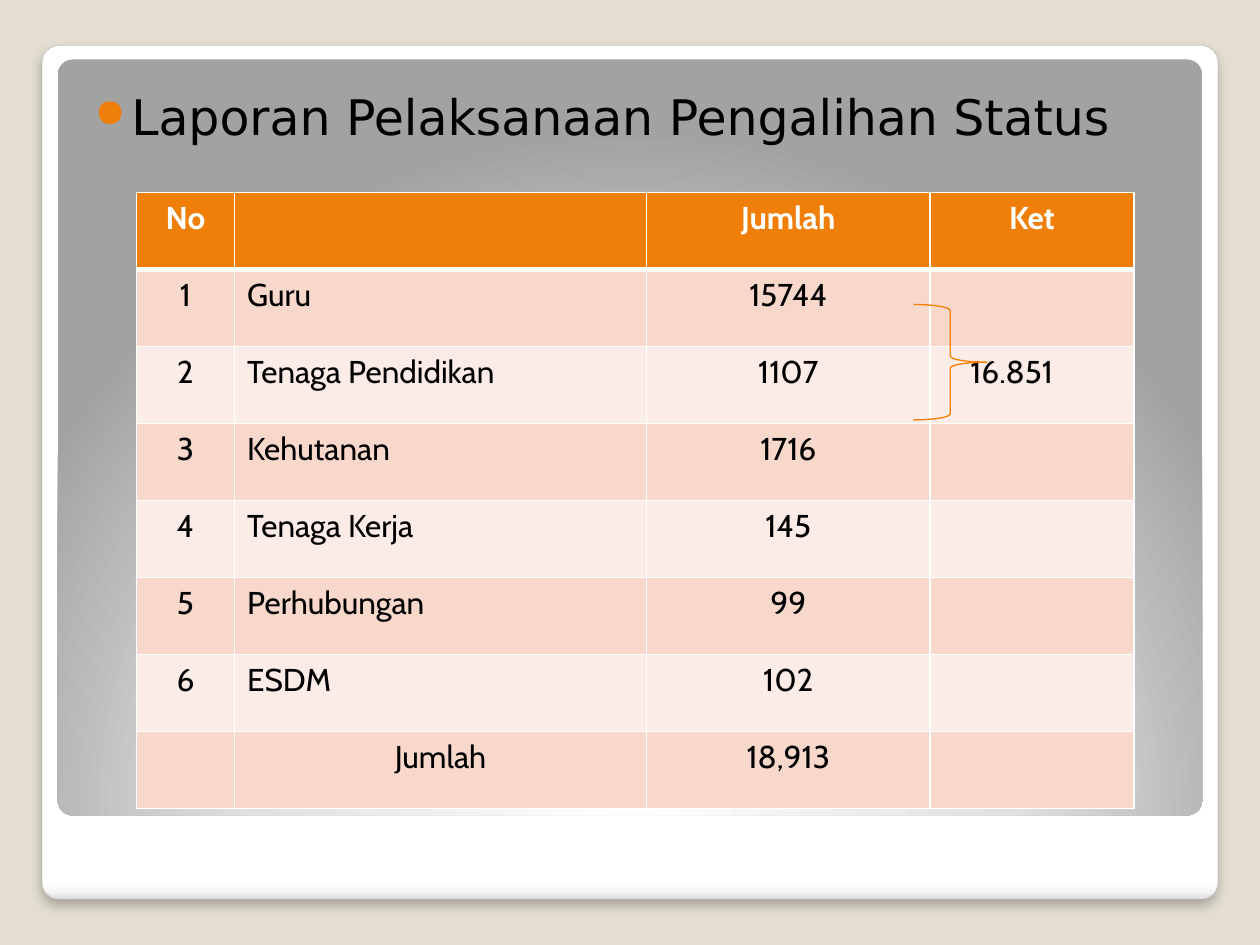
from dataclasses import dataclass

from lxml import etree
from pptx import Presentation
from pptx.dml.color import RGBColor
from pptx.enum.shapes import MSO_SHAPE
from pptx.enum.text import MSO_ANCHOR, MSO_AUTO_SIZE, PP_ALIGN
from pptx.oxml.ns import qn
from pptx.util import Pt

ROUNDED = MSO_SHAPE.ROUNDED_RECTANGLE
BRACE = MSO_SHAPE.RIGHT_BRACE
TOP = MSO_ANCHOR.TOP
NO_AUTOFIT = MSO_AUTO_SIZE.NONE
LEFT, CENTER = PP_ALIGN.LEFT, PP_ALIGN.CENTER
TITLE_ONLY = 5


@dataclass(frozen=True)
class Theme:
    background: str = "E3DED1"
    accent: str = "F07F09"
    brace: str = "F97F00"
    frame_line: str = "A4A4A4"
    text: str = "000000"
    white: str = "FFFFFF"
    bands: tuple = ("F9D8CC", "FCECE7")
    frame_stops: tuple = ((0, "FFFFFF"), (98, "FFFFFF"), (99, "F7F7F7"), (100, "DADADA"))
    panel_stops: tuple = ((0, "FFFFFF"), (55, "E1E1E1"), (100, "A2A2A2"))
    title_font: str = "DejaVu Sans"
    table_font: str = "Cabin"
    title_size: int = 28
    table_size: int = 18


THEME = Theme()

ROWS = (
    ("No", "", "Jumlah", "Ket"),
    ("1", "Guru", "15744", ""),
    ("2", "Tenaga Pendidikan", "1107", "16.851"),
    ("3", "Kehutanan", "1716", ""),
    ("4", "Tenaga Kerja", "145", ""),
    ("5", "Perhubungan", "99", ""),
    ("6", "ESDM", "102", ""),
    ("", "Jumlah", "18,913", ""),
)
COLUMN_WIDTHS = (56, 235.5, 162, 116.5)
ROW_HEIGHT = 44
NAME_COLUMN, NOTE_COLUMN = 1, 3
NOTE_INSET = 23


def rgb(color):
    return RGBColor.from_string(color)


def add_xml(parent, tag, **attributes):
    values = {name: str(value) for name, value in attributes.items()}
    return etree.SubElement(parent, qn(tag), values)


def style_font(paragraph, name, size, color, bold=False):
    font = paragraph.font
    font.name, font.size, font.bold = name, Pt(size), bold
    font.color.rgb = rgb(color)


def fill_gradient(shape, stops):
    """Give the shape a gradient with the stops and return its element."""
    shape.fill.gradient()
    gradient = shape.element.spPr.find(qn("a:gradFill"))
    for child in list(gradient):
        gradient.remove(child)
    stop_list = add_xml(gradient, "a:gsLst")
    for percent, color in stops:
        stop = add_xml(stop_list, "a:gs", pos=percent * 1000)
        add_xml(stop, "a:srgbClr", val=color)
    return gradient


def add_card(slide, left, top, width, height):
    card = slide.shapes.add_shape(ROUNDED, Pt(left), Pt(top), Pt(width), Pt(height))
    card.adjustments[0] = 0.02
    card.shadow.inherit = False
    return card


def add_frame(slide):
    frame = add_card(slide, 24, 26, 672, 488)
    gradient = fill_gradient(frame, THEME.frame_stops)
    add_xml(gradient, "a:lin", ang=90 * 60000, scaled=0)
    frame.line.color.rgb = rgb(THEME.frame_line)
    frame.line.width = Pt(0.16)
    effects = frame.element.spPr.find(qn("a:effectLst"))
    shadow = add_xml(effects, "a:outerShdw", blurRad=Pt(6), dist=Pt(4),
                     dir=90 * 60000, algn="tl", rotWithShape=0)
    shade = add_xml(shadow, "a:srgbClr", val=THEME.text)
    add_xml(shade, "a:alpha", val=25000)


def add_panel(slide):
    panel = add_card(slide, 33, 34, 654, 432)
    gradient = fill_gradient(panel, THEME.panel_stops)
    circle = add_xml(gradient, "a:path", path="circle")
    add_xml(circle, "a:fillToRect", l=50000, t=175000, r=50000, b=-75000)
    panel.line.fill.background()


def place_title(slide, text):
    title = slide.shapes.title
    slide.shapes.element.append(title.element)  # in front of the cards
    title.left, title.top, title.width, title.height = Pt(39.6), Pt(42), Pt(644), Pt(54)
    frame = title.text_frame
    frame.margin_left, frame.margin_top = Pt(14.4), Pt(7.2)
    frame.margin_right, frame.margin_bottom = Pt(7.2), Pt(3.6)
    frame.word_wrap = True
    frame.auto_size = NO_AUTOFIT
    frame.vertical_anchor = TOP
    frame.text = text
    paragraph = frame.paragraphs[0]
    paragraph.alignment = LEFT
    paragraph.space_before = Pt(2.5)
    style_font(paragraph, THEME.title_font, THEME.title_size, THEME.text)
    # Hanging bullet
    properties = paragraph._p.get_or_add_pPr()
    properties.set("marL", str(Pt(21)))
    properties.set("indent", str(Pt(-21)))
    bullet_color = etree.Element(qn("a:buClr"))
    add_xml(bullet_color, "a:srgbClr", val=THEME.accent)
    bullet_size = etree.Element(qn("a:buSzPct"), val="80000")
    bullet = etree.Element(qn("a:buChar"), char="●")
    defaults = properties.find(qn("a:defRPr"))
    for part in (bullet_color, bullet_size, bullet):
        defaults.addprevious(part)


def draw_borders(cell, top, bottom):
    properties = cell._tc.get_or_add_tcPr()
    for side, width in (("L", 1), ("R", 1), ("T", top), ("B", bottom)):
        line = add_xml(properties, f"a:ln{side}", w=Pt(width))
        solid = add_xml(line, "a:solidFill")
        add_xml(solid, "a:srgbClr", val=THEME.white)


def format_cell(cell, text, row, column):
    is_header, is_total = row == 0, row == len(ROWS) - 1
    draw_borders(cell, top=3 if row == 1 else 1, bottom=3 if is_header else 1)
    cell.fill.solid()
    cell.fill.fore_color.rgb = rgb(THEME.accent if is_header else THEME.bands[(row - 1) % 2])
    cell.text = text
    paragraph = cell.text_frame.paragraphs[0]
    style_font(paragraph, THEME.table_font, THEME.table_size,
               THEME.white if is_header else THEME.text, is_header)
    is_left = column in (NAME_COLUMN, NOTE_COLUMN) and not (is_header or is_total)
    paragraph.alignment = LEFT if is_left else CENTER
    if is_left and column == NOTE_COLUMN:
        cell.margin_left = Pt(NOTE_INSET)


def add_status_table(slide):
    table = slide.shapes.add_table(
        len(ROWS), len(COLUMN_WIDTHS), Pt(78), Pt(110),
        Pt(sum(COLUMN_WIDTHS)), Pt(ROW_HEIGHT * len(ROWS))).table
    for column, width in zip(table.columns, COLUMN_WIDTHS):
        column.width = Pt(width)
    for row, texts in enumerate(ROWS):
        table.rows[row].height = Pt(ROW_HEIGHT)
        for column, text in enumerate(texts):
            format_cell(table.cell(row, column), text, row, column)


def add_brace(slide):
    brace = slide.shapes.add_shape(BRACE, Pt(522), Pt(174), Pt(42), Pt(66))
    brace.shadow.inherit = False
    brace.fill.background()
    brace.line.color.rgb = rgb(THEME.brace)
    brace.line.width = Pt(0.75)


def main():
    presentation = Presentation()
    presentation.slide_width, presentation.slide_height = Pt(720), Pt(540)
    slide = presentation.slides.add_slide(presentation.slide_layouts[TITLE_ONLY])
    slide.background.fill.solid()
    slide.background.fill.fore_color.rgb = rgb(THEME.background)

    # Backdrop
    add_frame(slide)
    add_panel(slide)
    # Content
    place_title(slide, "Laporan Pelaksanaan Pengalihan Status")
    add_status_table(slide)
    add_brace(slide)
    presentation.save("out.pptx")


if __name__ == "__main__":
    main()
